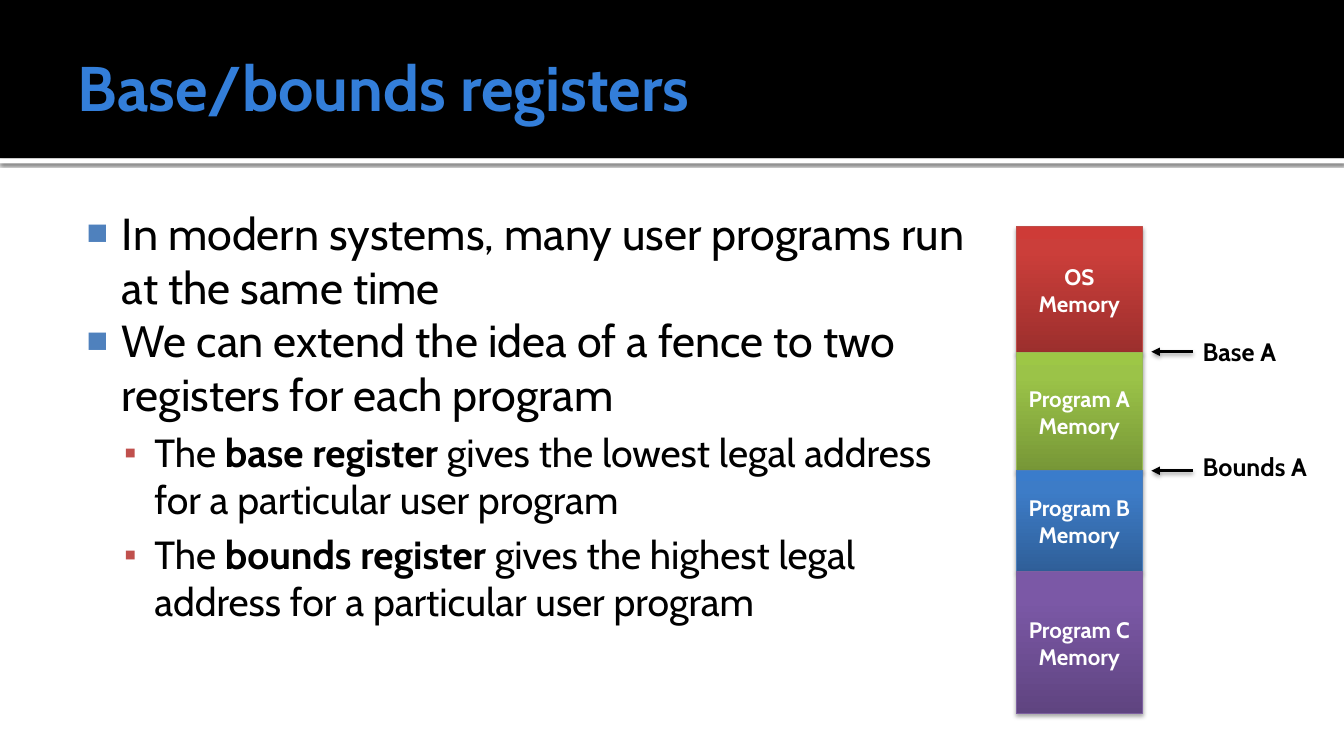
import copy
from dataclasses import dataclass

import pptx
import pptx.dml.color
import pptx.enum.shapes
import pptx.enum.text
import pptx.oxml.ns
import pptx.util
from lxml import etree
from pptx.util import Inches

qn = pptx.oxml.ns.qn


@dataclass(frozen=True)
class Theme:
    font: str = "Cabin"
    title: str = "337ED9"
    dark: str = "000000"
    light: str = "FFFFFF"
    title_size: int = 45
    body_sizes: tuple = (32, 28)
    block_size: int = 16
    label_size: int = 18
    bullets: tuple = (("■", "4F81BD", 80), ("▪", "C0504D", 90))
    indents: tuple = ((0.48, -0.35), (0.8, -0.3))
    red: tuple = ("9C2F2D", "CB3E3A", "CE3B37", "BF4C48")
    green: tuple = ("779737", "9BC348", "9DC746", "98B955")
    blue: tuple = ("2F5F99", "3D7CC7", "3A7CCB", "4B7EBC")
    purple: tuple = ("5F4480", "7B58A6", "7C57A8", "7D60A0")


THEME = Theme()

BODY = [
    (0, ["In modern systems, many user programs run at the same time"]),
    (0, ["We can extend the idea of a fence to two registers for each program"]),
    (1, ["The ", "base register", " gives the lowest legal address for a particular user program"]),
    (1, ["The ", "bounds register", " gives the highest legal address for a particular user program"]),
]

BLOCKS = [
    ("OS Memory", 1.25, THEME.red),
    ("Program A Memory", 1.17, THEME.green),
    ("Program B Memory", 1, THEME.blue),
    ("Program C Memory", 1.41, THEME.purple),
]

LABELS = [("Base A", 1, 3.29, 3.49), ("Bounds A", 1.25, 4.43, 4.67)]


def rgb(color):
    return pptx.dml.color.RGBColor.from_string(color)


def format_run(r, size, color, bold=False):
    r.font.name = THEME.font
    r.font.size = pptx.util.Pt(size)
    r.font.color.rgb = rgb(color)
    r.font.bold = bold


def place(sp, left, top, width, height):
    sp.left, sp.top = Inches(left), Inches(top)
    sp.width, sp.height = Inches(width), Inches(height)


def set_insets(tf, left, top, right, bottom):
    tf.margin_left, tf.margin_top = Inches(left), Inches(top)
    tf.margin_right, tf.margin_bottom = Inches(right), Inches(bottom)


def add_shadow(sp, alpha, blur, distance):
    effects = etree.SubElement(sp.element.spPr, qn("a:effectLst"))
    shadow = etree.SubElement(
        effects, qn("a:outerShdw"),
        blurRad=str(pptx.util.Pt(blur)), dist=str(pptx.util.Pt(distance)),
        dir="5400000", rotWithShape="0")
    color = etree.SubElement(shadow, qn("a:srgbClr"), val=THEME.dark)
    etree.SubElement(color, qn("a:alpha"), val=str(alpha * 1000))


def add_rect(s, left, top, width, height):
    return s.shapes.add_shape(
        pptx.enum.shapes.MSO_SHAPE.RECTANGLE,
        Inches(left), Inches(top), Inches(width), Inches(height))


def add_band(s, top, height, color):
    sp = add_rect(s, 0, top, 13.33, height)
    sp.fill.solid()
    sp.fill.fore_color.rgb = rgb(color)
    sp.line.fill.background()
    s.shapes.title.element.addprevious(sp.element)
    return sp


def add_header(s):
    rule = add_band(s, 1.57, 0.05, THEME.light)
    add_shadow(rule, 60, 2.5, 0.8)
    header = add_band(s, 0, 1.57, THEME.dark)
    header.shadow.inherit = False


def fill_title(sp, text):
    place(sp, 0.67, 0.17, 12, 1.37)
    tf = sp.text_frame
    tf.text = text
    tf.auto_size = pptx.enum.text.MSO_AUTO_SIZE.NONE
    tf.vertical_anchor = pptx.enum.text.MSO_ANCHOR.MIDDLE
    set_insets(tf, 0.1, 0.05, 0.05, 0.05)
    p = tf.paragraphs[0]
    p.alignment = pptx.enum.text.PP_ALIGN.LEFT
    format_run(p.runs[0], THEME.title_size, THEME.title, True)


def set_bullet(p, level):
    char, color, percent = THEME.bullets[level]
    margin, indent = THEME.indents[level]
    pPr = p._p.get_or_add_pPr()
    pPr.set("marL", str(Inches(margin)))
    pPr.set("indent", str(Inches(indent)))
    etree.SubElement(etree.SubElement(pPr, qn("a:buClr")), qn("a:srgbClr"), val=color)
    etree.SubElement(pPr, qn("a:buSzPct"), val=str(percent * 1000))
    etree.SubElement(pPr, qn("a:buChar"), char=char)


def fill_body(sp, items):
    place(sp, 0.67, 1.94, 9.08, 5.06)
    tf = sp.text_frame
    tf.auto_size = pptx.enum.text.MSO_AUTO_SIZE.NONE
    set_insets(tf, 0.06, 0.1, 0.1, 0.05)
    for i, (level, parts) in enumerate(items):
        p = tf.add_paragraph() if i else tf.paragraphs[0]
        p.level = level
        if level == 0:
            p.space_before = pptx.util.Pt(0)
        set_bullet(p, level)
        for j, part in enumerate(parts):
            r = p.add_run()
            r.text = part
            format_run(r, THEME.body_sizes[level], THEME.dark, j == 1)


def fill_gradient(sp, colors):
    sp.fill.gradient()
    sp.fill.gradient_angle = 90
    stops = sp.element.spPr.find(".//" + qn("a:gsLst"))
    stops.append(copy.deepcopy(stops[-1]))
    for stop, position, color in zip(sp.fill.gradient_stops, (0, 0.8, 1), colors):
        stop.position = position
        stop.color.rgb = rgb(color)


def add_block(s, text, top, height, colors):
    *stops, outline = colors
    sp = add_rect(s, 10.08, top, 1.25, height)
    fill_gradient(sp, stops)
    sp.line.color.rgb = rgb(outline)
    sp.line.width = pptx.util.Pt(0.75)
    add_shadow(sp, 35, 3.1, 1.8)
    tf = sp.text_frame
    tf.text = text
    tf.word_wrap = True
    tf.vertical_anchor = pptx.enum.text.MSO_ANCHOR.MIDDLE
    p = tf.paragraphs[0]
    p.alignment = pptx.enum.text.PP_ALIGN.CENTER
    format_run(p.runs[0], THEME.block_size, THEME.light, True)


def add_label(s, text, width, top):
    sp = s.shapes.add_textbox(Inches(11.83), Inches(top), Inches(width), Inches(0.4))
    tf = sp.text_frame
    tf.text = text
    tf.word_wrap = True
    tf.auto_size = pptx.enum.text.MSO_AUTO_SIZE.SHAPE_TO_FIT_TEXT
    format_run(tf.paragraphs[0].runs[0], THEME.label_size, THEME.dark, True)


def add_arrow(s, y):
    arrow = s.shapes.add_connector(
        pptx.enum.shapes.MSO_CONNECTOR.STRAIGHT,
        Inches(11.83), Inches(y), Inches(11.42), Inches(y))
    arrow.line.color.rgb = rgb(THEME.dark)
    arrow.line.width = pptx.util.Pt(2)
    etree.SubElement(arrow.element.spPr.find(qn("a:ln")), qn("a:tailEnd"), type="triangle")
    add_shadow(arrow, 38, 3.1, 1.6)


def main():
    prs = pptx.Presentation()
    prs.slide_width, prs.slide_height = Inches(13.33), Inches(7.5)
    s = prs.slides.add_slide(prs.slide_layouts[1])
    add_header(s)
    fill_title(s.shapes.title, "Base/bounds registers")
    fill_body(s.placeholders[1], BODY)
    top = 2.25
    for text, height, colors in BLOCKS:
        add_block(s, text, top, height, colors)
        top += height
    for text, width, label_top, arrow_y in LABELS:
        add_label(s, text, width, label_top)
        add_arrow(s, arrow_y)
    prs.save("out.pptx")


if __name__ == "__main__":
    main()
